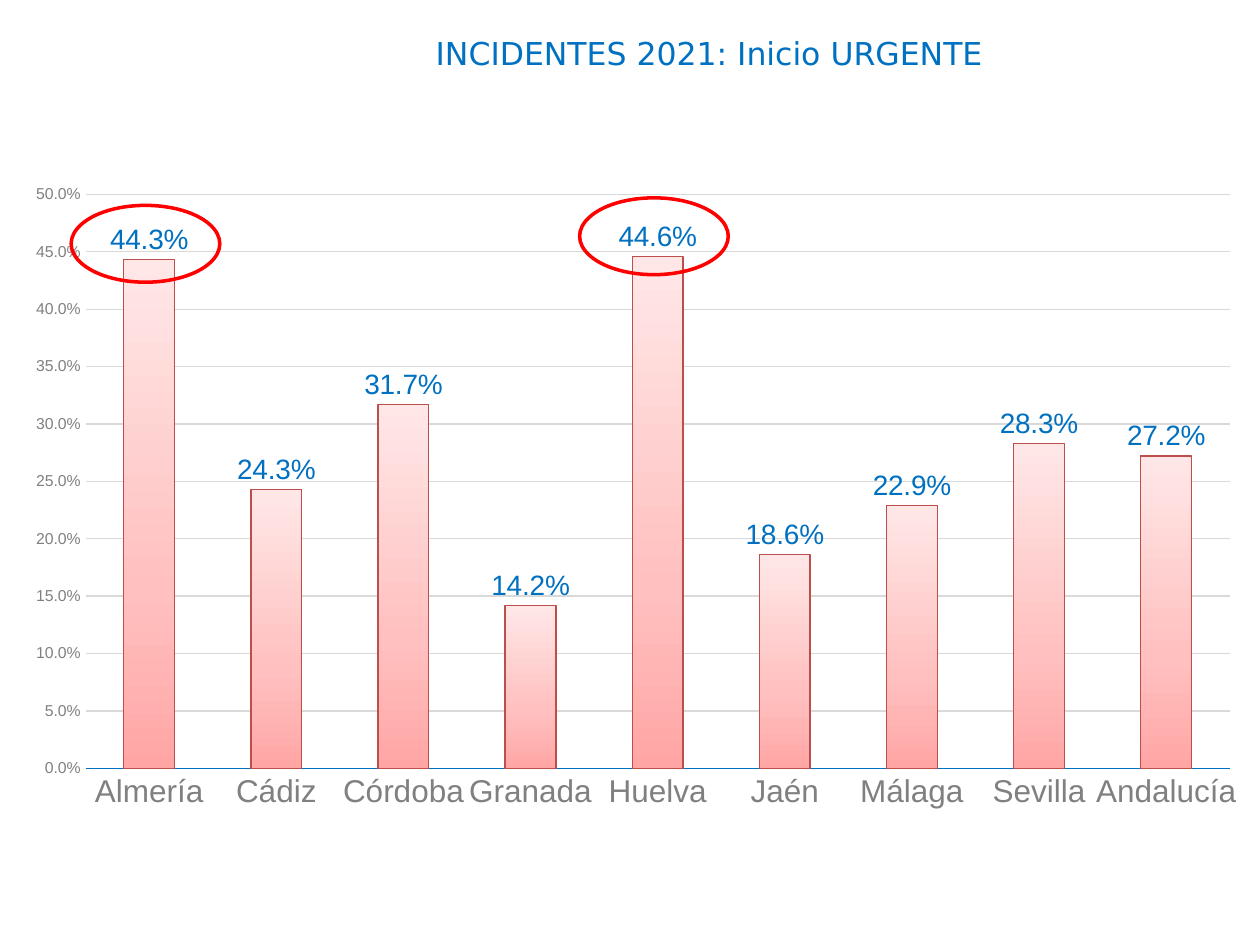
from pptx import Presentation
from pptx.chart.data import CategoryChartData
from pptx.dml.color import RGBColor
from pptx.enum.chart import XL_CHART_TYPE, XL_LABEL_POSITION, XL_TICK_MARK
from pptx.enum.shapes import MSO_SHAPE
from pptx.oxml import parse_xml
from pptx.oxml.ns import nsdecls
from pptx.util import Inches, Pt

COLUMNS = XL_CHART_TYPE.COLUMN_CLUSTERED
LABEL_ABOVE = XL_LABEL_POSITION.OUTSIDE_END
NO_TICK = XL_TICK_MARK.NONE
ELLIPSE = MSO_SHAPE.OVAL

# Content
TITLE = "INCIDENTES 2021: Inicio URGENTE"
URGENT_SHARE = {
    "Almería": 0.443, "Cádiz": 0.243, "Córdoba": 0.317,
    "Granada": 0.142, "Huelva": 0.446, "Jaén": 0.186,
    "Málaga": 0.229, "Sevilla": 0.283, "Andalucía": 0.272,
}
HIGHLIGHT_TOPS = {"Almería": 1.63, "Huelva": 1.57}

# Format
COLORS = {"blue": "0070C0", "gray": "808080", "grid": "D9D9D9",
          "outline": "BC4E4B", "highlight": "FF0000", "black": "000000"}
BAR_GRADIENT = [(0, "FFA6A5"), (35, "FFC0BF"), (100, "FFE7E7")]
PERCENT = "0.0%"
SLIDE_W, SLIDE_H = 10, 7.5
CHART_TOP = 1.19
PLOT = {"x": 0.068, "y": 0.056, "w": 0.908, "h": 0.722}
RING_W, RING_H, RING_SHIFT = 1.18, 0.61, -0.03


def rgb(color):
    return RGBColor.from_string(COLORS[color])


def set_font(font, size, color, name="Arial"):
    for attribute, value in {"size": Pt(size), "name": name, "bold": False}.items():
        setattr(font, attribute, value)
    font.color.rgb = rgb(color)


def set_line(line, color, width):
    line.color.rgb = rgb(color)
    line.width = Pt(width)


def set_plot_area(chart):
    sizes = "".join(f'<c:{key} val="{share}"/>' for key, share in PLOT.items())
    layout = parse_xml(
        f'<c:layout {nsdecls("c")}><c:manualLayout><c:layoutTarget val="inner"/>'
        f'<c:xMode val="edge"/><c:yMode val="edge"/>{sizes}</c:manualLayout></c:layout>')
    plot_area = chart._chartSpace.chart.plotArea
    for old in plot_area.xpath("c:layout"):
        plot_area.remove(old)
    plot_area.insert(0, layout)


def set_bar_gradient(bars):
    bars.format.fill.gradient()
    bars.format.fill.gradient_angle = 90
    stops = "".join(f'<a:gs pos="{share * 1000}"><a:srgbClr val="{color}"/></a:gs>'
                    for share, color in BAR_GRADIENT)
    old = bars._element.xpath("c:spPr/a:gradFill/a:gsLst")[0]
    old.getparent().replace(old, parse_xml(f'<a:gsLst {nsdecls("a")}>{stops}</a:gsLst>'))


def add_title(slide):
    box = slide.shapes.add_textbox(Inches(3.36), Inches(0.22), Inches(6.64), Inches(0.4))
    box.text_frame.word_wrap = True
    run = box.text_frame.paragraphs[0].add_run()
    run.text = TITLE
    set_font(run.font, 18, "blue", "DejaVu Sans")


def add_share_chart(slide):
    data = CategoryChartData(number_format=PERCENT)
    data.categories = list(URGENT_SHARE)
    data.add_series("Series 1", list(URGENT_SHARE.values()))
    chart = slide.shapes.add_chart(
        COLUMNS, 0, Inches(CHART_TOP), Inches(SLIDE_W),
        Inches(SLIDE_H - CHART_TOP), data).chart
    chart.has_title = chart.has_legend = False
    set_font(chart.font, 10, "black")
    set_plot_area(chart)

    # Axes
    provinces, shares = chart.category_axis, chart.value_axis
    for axis, size in ((provinces, 18), (shares, 9)):
        axis.major_tick_mark = axis.minor_tick_mark = NO_TICK
        set_font(axis.tick_labels.font, size, "gray")
    set_line(provinces.format.line, "blue", 0.75)
    scale = {"minimum_scale": 0, "maximum_scale": 0.5, "major_unit": 0.05,
             "has_major_gridlines": True}
    for attribute, value in scale.items():
        setattr(shares, attribute, value)
    shares.format.line.fill.background()
    set_line(shares.major_gridlines.format.line, "grid", 0.75)
    shares.tick_labels.number_format = PERCENT
    shares.tick_labels.number_format_is_linked = False

    # Bars and their labels
    plot = chart.plots[0]
    plot.gap_width = 150
    plot.vary_by_categories = False
    bars = plot.series[0]
    set_bar_gradient(bars)
    set_line(bars.format.line, "outline", 0.75)
    labels = bars.data_labels
    label_format = {"show_value": True, "position": LABEL_ABOVE,
                    "number_format": PERCENT, "number_format_is_linked": False}
    for attribute, value in label_format.items():
        setattr(labels, attribute, value)
    set_font(labels.font, 16, "blue")


def add_highlights(slide):
    provinces = list(URGENT_SHARE)
    for province, top in HIGHLIGHT_TOPS.items():
        column = (provinces.index(province) + 0.5) / len(provinces)
        center = SLIDE_W * (PLOT["x"] + PLOT["w"] * column) + RING_SHIFT
        ring = slide.shapes.add_shape(
            ELLIPSE, Inches(center - RING_W / 2), Inches(top),
            Inches(RING_W), Inches(RING_H))
        ring.shadow.inherit = False
        ring.fill.background()
        set_line(ring.line, "highlight", 2)


def main():
    deck = Presentation()
    deck.slide_width, deck.slide_height = Inches(SLIDE_W), Inches(SLIDE_H)
    slide = deck.slides.add_slide(deck.slide_layouts[6])
    add_title(slide)
    add_share_chart(slide)
    add_highlights(slide)
    deck.save("out.pptx")


if __name__ == "__main__":
    main()
